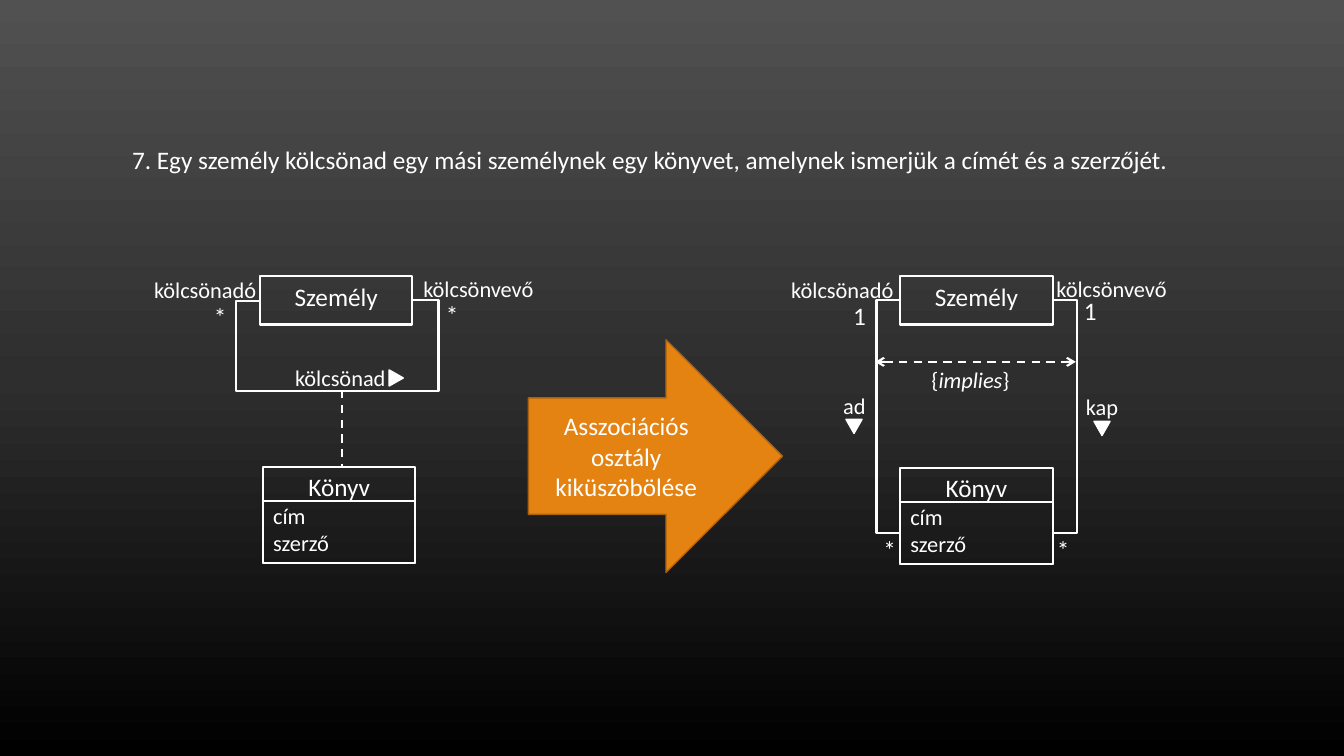
from copy import deepcopy
from dataclasses import dataclass

from lxml import etree
from pptx import Presentation
from pptx.dml.color import RGBColor
from pptx.enum import dml, shapes, text
from pptx.oxml import ns
from pptx.util import Inches, Pt

FONT = "Calibri"
WHITE = "FFFFFF"
ORANGE = "E48312"
BROWN = "A9610D"
BACKGROUND = [(0, "515151"), (0.5, "2E2E2E"), (1, "000000")]
BOX_WIDTH = 1.51
PERSON_HEIGHT = 0.48
BOOK_HEIGHT = 0.96
ATTRIBUTES_HEIGHT = 0.62

Point = tuple[float, float]


@dataclass
class Label:
    wording: str
    left: float
    top: float
    width: float
    size: int = 16
    italic: str = ""

    @property
    def height(self) -> float:
        return 0.4 if self.size == 18 else 0.37


@dataclass
class ClassPair:
    """A person box above a book box."""
    person: Point
    book: Point


@dataclass
class Elbow:
    """A bent line; bends are alternating x and y positions."""
    start: Point
    end: Point
    bends: list[float]


@dataclass
class Pointer:
    """A small triangle giving the reading direction."""
    left: float
    top: float
    rotation: int


CLASS_PAIRS = [
    ClassPair((2.58, 2.74), (2.61, 4.63)),
    ClassPair((8.93, 2.74), (8.93, 4.64)),
]
ELBOWS = [
    Elbow((2.58, 2.99), (4.1, 2.98), [2.34, 3.89, 4.35]),
    Elbow((8.94, 2.98), (8.93, 5.29), [8.69]),
    Elbow((10.44, 2.98), (10.45, 5.29), [10.69]),
]
POINTERS = [
    Pointer(3.85, 3.68, 90),
    Pointer(8.39, 4.16, 180),
    Pointer(10.85, 4.18, 180),
]
LABELS = [
    Label("kölcsönadó", 1.42, 2.69, 1.23),
    Label("*", 2.02, 2.94, 0.33, 18),
    Label("kölcsönvevő", 4.09, 2.68, 1.31),
    Label("*", 4.32, 2.92, 0.33, 18),
    Label("kölcsönad", 2.82, 3.56, 1.11),
    Label("kölcsönadó", 7.74, 2.69, 1.23),
    Label("1", 8.36, 2.93, 0.33, 18),
    Label("kölcsönvevő", 10.37, 2.68, 1.31),
    Label("1", 10.65, 2.88, 0.33, 18),
    Label("{implies}", 9.13, 3.58, 0.99, italic="implies"),
    Label("ad", 8.26, 3.84, 0.43),
    Label("kap", 10.67, 3.85, 0.52),
    Label("*", 8.66, 5.25, 0.33, 18),
    Label("*", 10.38, 5.25, 0.33, 18),
]


def rgb(colour: str) -> RGBColor:
    return RGBColor.from_string(colour)


def paint_background(slide) -> None:
    fill = slide.background.fill
    fill.gradient()
    fill.gradient_angle = 270
    stop_list = slide.element.xpath(".//a:gsLst")[0]
    stop_list.append(deepcopy(stop_list[-1]))
    for stop, (position, colour) in zip(fill.gradient_stops, BACKGROUND):
        stop.position = position
        stop.color.rgb = rgb(colour)


def style(paragraph, size: int, align=text.PP_ALIGN.CENTER) -> None:
    paragraph.alignment = align
    paragraph.font.name = FONT
    paragraph.font.size = Pt(size)
    paragraph.font.color.rgb = rgb(WHITE)


def add_outline(slide, kind, left: float, top: float, width: float, height: float,
                fill: str = "", line: str = WHITE, weight: float = 1.5):
    shape = slide.shapes.add_shape(
        kind, Inches(left), Inches(top), Inches(width), Inches(height))
    shape.shadow.inherit = False
    if fill:
        shape.fill.solid()
        shape.fill.fore_color.rgb = rgb(fill)
    else:
        shape.fill.background()
    shape.line.color.rgb = rgb(line)
    shape.line.width = Pt(weight)
    return shape


def add_class_pair(slide, pair: ClassPair) -> None:
    rectangle = shapes.MSO_SHAPE.RECTANGLE
    for (left, top), height, name, attributes in [
        (pair.person, PERSON_HEIGHT, "Személy", []),
        (pair.book, BOOK_HEIGHT, "Könyv", ["cím", "szerző"]),
    ]:
        frame = add_outline(slide, rectangle, left, top, BOX_WIDTH, height).text_frame
        frame.vertical_anchor = text.MSO_ANCHOR.TOP
        frame.text = name
        style(frame.paragraphs[0], 18)
        for attribute in attributes:
            paragraph = frame.add_paragraph()
            paragraph.text = attribute
            style(paragraph, 16, text.PP_ALIGN.LEFT)
    left, top = pair.book
    add_outline(slide, rectangle, left, top + BOOK_HEIGHT - ATTRIBUTES_HEIGHT,
                BOX_WIDTH, ATTRIBUTES_HEIGHT)


def add_line(slide, start: Point, end: Point,
             kind=shapes.MSO_CONNECTOR.STRAIGHT, dashed: bool = False):
    line = slide.shapes.add_connector(kind, *map(Inches, start + end))
    line.line.color.rgb = rgb(WHITE)
    line.line.width = Pt(1.5)
    if dashed:
        line.line.dash_style = dml.MSO_LINE.DASH
    etree.SubElement(line._element.spPr, ns.qn("a:effectLst"))
    return line


def add_elbow(slide, elbow: Elbow) -> None:
    line = add_line(slide, elbow.start, elbow.end, shapes.MSO_CONNECTOR.ELBOW)
    geometry = line._element.xpath(".//a:prstGeom")[0]
    geometry.set("prst", f"bentConnector{len(elbow.bends) + 2}")
    guides = geometry.find(ns.qn("a:avLst"))
    for index, bend in enumerate(elbow.bends):
        start, end = elbow.start[index % 2], elbow.end[index % 2]
        ratio = (bend - start) / (end - start)
        etree.SubElement(guides, ns.qn("a:gd"), name=f"adj{index + 1}",
                         fmla=f"val {round(ratio * 100000)}")


def add_double_arrow(slide, start: Point, end: Point) -> None:
    outline = add_line(slide, start, end, dashed=True).line._get_or_add_ln()
    for tip in ("a:headEnd", "a:tailEnd"):
        etree.SubElement(outline, ns.qn(tip), type="arrow")


def add_label(slide, label: Label) -> None:
    frame = slide.shapes.add_textbox(*map(
        Inches, (label.left, label.top, label.width, label.height))).text_frame
    frame.word_wrap = False
    frame.auto_size = text.MSO_AUTO_SIZE.SHAPE_TO_FIT_TEXT
    paragraph = frame.paragraphs[0]
    style(paragraph, label.size)
    if label.italic:
        before, after = label.wording.split(label.italic)
        for part in (before, label.italic, after):
            run = paragraph.add_run()
            run.text = part
            run.font.italic = part == label.italic
    else:
        paragraph.text = label.wording


def add_sentence(slide) -> None:
    sentence = slide.shapes.title
    sentence.left, sentence.top = Inches(1.21), Inches(1.38)
    sentence.width, sentence.height = Inches(10.77), Inches(0.4)
    frame = sentence.text_frame
    frame.text = ("7. Egy személy kölcsönad egy mási személynek egy könyvet, "
                  "amelynek ismerjük a címét és a szerzőjét.")
    frame.word_wrap = False
    frame.auto_size = text.MSO_AUTO_SIZE.SHAPE_TO_FIT_TEXT
    frame.vertical_anchor = text.MSO_ANCHOR.TOP
    style(frame.paragraphs[0], 18, text.PP_ALIGN.LEFT)


def main() -> None:
    deck = Presentation()
    deck.slide_width, deck.slide_height = Inches(13.33), Inches(7.5)
    slide = deck.slides.add_slide(deck.slide_layouts.get_by_name("Title Only"))
    paint_background(slide)
    add_sentence(slide)
    for pair in CLASS_PAIRS:
        add_class_pair(slide, pair)
    for elbow in ELBOWS:
        add_elbow(slide, elbow)
    add_line(slide, (3.39, 3.87), (3.39, 4.63), dashed=True)
    add_double_arrow(slide, (8.68, 3.59), (10.67, 3.59))
    for pointer in POINTERS:
        add_outline(slide, shapes.MSO_SHAPE.ISOSCELES_TRIANGLE, pointer.left, pointer.top,
                    0.16, 0.14, WHITE, weight=1).rotation = pointer.rotation
    for label in LABELS:
        add_label(slide, label)
    step = add_outline(slide, shapes.MSO_SHAPE.RIGHT_ARROW, 5.24, 3.37, 2.52, 2.31,
                       ORANGE, BROWN, 1)
    step.text_frame.text = "Asszociációs osztály kiküszöbölése"
    step.text_frame.vertical_anchor = text.MSO_ANCHOR.MIDDLE
    style(step.text_frame.paragraphs[0], 18)
    deck.save("out.pptx")


if __name__ == "__main__":
    main()
